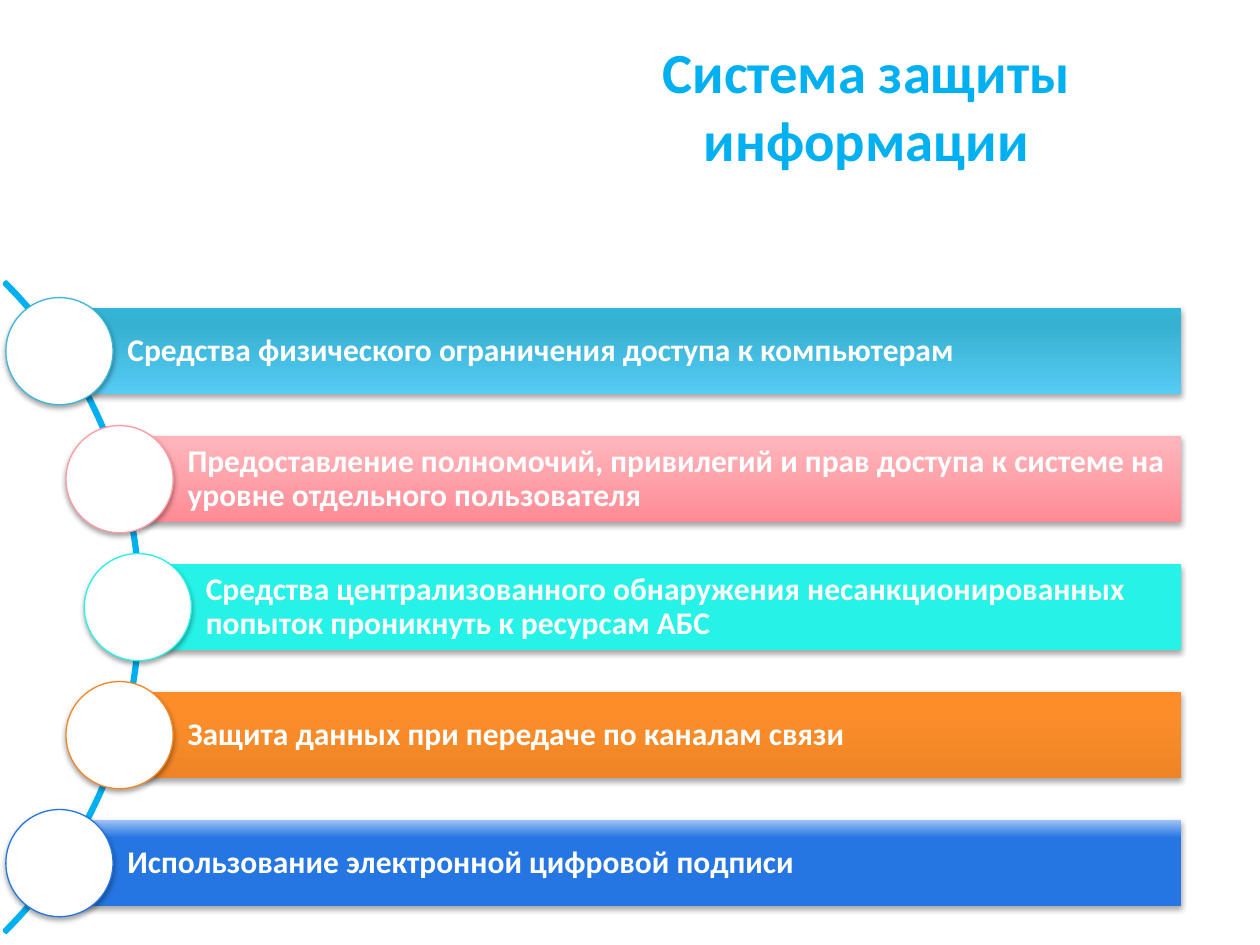
import math
from dataclasses import dataclass

from pptx import Presentation
from pptx import util as u
from pptx.dml.color import RGBColor
from pptx.enum import shapes, text
from pptx.oxml import parse_xml
from pptx.oxml.ns import nsdecls, qn


@dataclass(frozen=True)
class Theme:
    font: str = "Calibri"
    accent: str = "00B0F0"
    white: str = "FFFFFF"
    title_size: float = 32.4
    bar_size: float = 18


THEME = Theme()

# Text, circle outline, gradient stops from bottom to top (position %, colour)
MEASURES = [
    ("Средства физического ограничения доступа к компьютерам",
     "3DB7D9", [(0, "56CBF4"), (80, "37B1D2"), (100, "34B4D6")]),
    ("Предоставление полномочий, привилегий и прав доступа к системе "
     "на уровне отдельного пользователя",
     "FF9BA4", [(0, "FF8B94"), (94, "FFB4BB"), (100, "FEB4BC")]),
    ("Средства централизованного обнаружения несанкционированных "
     "попыток проникнуть к ресурсам АБС",
     "27F2E7", [(0, "27F2E7")]),
    ("Защита данных при передаче по каналам связи",
     "F38727", [(0, "EF8526"), (80, "FC8D29"), (100, "FF8F2A")]),
    ("Использование электронной цифровой подписи",
     "2576E2", [(0, "2576E2"), (80, "2576E2"), (100, "9EC2F5")]),
]


def rgb(value):
    return RGBColor.from_string(value)


def set_font(p, size, color):
    p.font.name = THEME.font
    p.font.size = u.Pt(size)
    p.font.bold = True
    p.font.color.rgb = rgb(color)


def fill_upward(sp, stops):
    """Fill with one colour, or with a gradient running from bottom to top."""
    if len(stops) == 1:
        sp.fill.solid()
        sp.fill.fore_color.rgb = rgb(stops[0][1])
        return
    sp.fill.gradient()
    sp.fill.gradient_angle = 90
    gs_list = sp._element.spPr.find(".//" + qn("a:gsLst"))
    for gs in list(gs_list):
        gs_list.remove(gs)
    for pos, color in stops:
        gs_list.append(parse_xml(
            f'<a:gs {nsdecls("a")} pos="{pos * 1000}"><a:srgbClr val="{color}"/></a:gs>'))


def drop_shadow(sp):
    sp.shadow.inherit = False
    sp._element.spPr.find(qn("a:effectLst")).append(parse_xml(
        f'<a:outerShdw {nsdecls("a")} blurRad="{u.Pt(3.1)}" dist="{u.Pt(1.8)}" '
        'dir="5400000" rotWithShape="0"><a:srgbClr val="000000">'
        '<a:alpha val="35000"/></a:srgbClr></a:outerShdw>'))


def add_title(slide, left, top, width, height):
    sp = slide.shapes.title
    sp.left, sp.top, sp.width, sp.height = map(u.Cm, (left, top, width, height))
    tf = sp.text_frame
    tf.text = "Система защиты информации"
    tf.word_wrap = True
    tf.auto_size = text.MSO_AUTO_SIZE.NONE
    tf.vertical_anchor = text.MSO_ANCHOR.MIDDLE
    p = tf.paragraphs[0]
    p.alignment = text.PP_ALIGN.CENTER
    set_font(p, THEME.title_size, THEME.accent)


def add_arc(slide, left, top, size):
    sp = slide.shapes.add_shape(
        shapes.MSO_SHAPE.BLOCK_ARC, *map(u.Cm, (left, top, size, size)))
    for i, value in enumerate((189, 27, 0.003)):
        sp.adjustments[i] = value
    sp.fill.background()
    sp.line.color.rgb = rgb(THEME.accent)
    sp.line.width = u.Pt(2)
    sp.shadow.inherit = False


def add_bar(slide, left, top, width, height, label, stops):
    sp = slide.shapes.add_shape(
        shapes.MSO_SHAPE.RECTANGLE, *map(u.Cm, (left, top, width, height)))
    fill_upward(sp, stops)
    sp.line.fill.background()
    drop_shadow(sp)
    tf = sp.text_frame
    tf.word_wrap = True
    tf.vertical_anchor = text.MSO_ANCHOR.MIDDLE
    tf.margin_left = u.Cm(1.37)
    tf.margin_right = tf.margin_top = tf.margin_bottom = u.Cm(0.13)
    p = tf.paragraphs[0]
    p.text = label
    p.alignment = text.PP_ALIGN.LEFT
    p.line_spacing = 0.9
    set_font(p, THEME.bar_size, THEME.white)


def add_circle(slide, center_x, center_y, size, outline):
    sp = slide.shapes.add_shape(
        shapes.MSO_SHAPE.OVAL,
        *map(u.Cm, (center_x - size / 2, center_y - size / 2, size, size)))
    sp.fill.solid()
    sp.fill.fore_color.rgb = rgb(THEME.white)
    sp.line.color.rgb = rgb(outline)
    sp.line.width = u.Pt(0.75)
    drop_shadow(sp)


def add_curved_list(slide, left, top, size, right):
    """Bars that start on an arc, each with a circle centred on the arc."""
    pitch, bar_height, circle_size = 2.58, 1.73, 2.16
    radius = size / 2 - 0.06
    center_x, center_y = left + size / 2, top + size / 2
    add_arc(slide, left, top, size)
    for i, (label, outline, stops) in enumerate(MEASURES):
        dy = (i - (len(MEASURES) - 1) / 2) * pitch
        x, y = center_x + math.sqrt(radius ** 2 - dy ** 2), center_y + dy
        add_bar(slide, x, y - bar_height / 2, right - x, bar_height, label, stops)
        add_circle(slide, x, y, circle_size, outline)


def main():
    prs = Presentation()
    prs.slide_width, prs.slide_height = u.Cm(25.4), u.Cm(19.05)
    slide = prs.slides.add_slide(prs.slide_layouts[5])
    add_curved_list(slide, left=-15.7, top=2.97, size=18.54, right=23.81)
    add_title(slide, 10.77, 1.04, 13.39, 2.13)
    prs.save("out.pptx")


if __name__ == "__main__":
    main()
